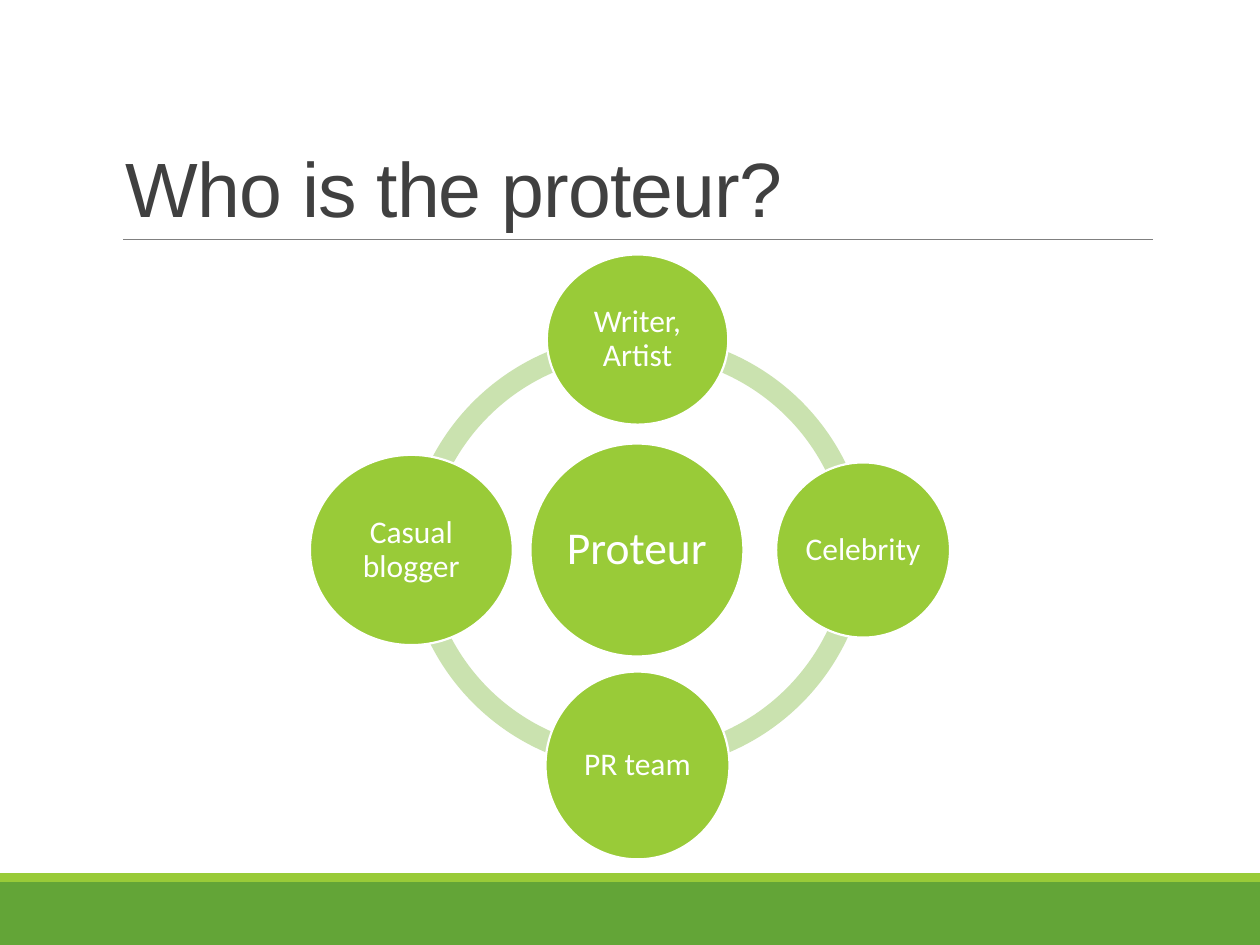
from dataclasses import dataclass

from lxml import etree
from pptx import Presentation
from pptx.dml.color import RGBColor
from pptx.enum.shapes import MSO_CONNECTOR, MSO_SHAPE
from pptx.enum.text import MSO_ANCHOR, PP_ALIGN
from pptx.oxml.ns import qn
from pptx.util import Inches, Pt

RECTANGLE = MSO_SHAPE.RECTANGLE
OVAL = MSO_SHAPE.OVAL
BLOCK_ARC = MSO_SHAPE.BLOCK_ARC
STRAIGHT = MSO_CONNECTOR.STRAIGHT
MIDDLE, BOTTOM = MSO_ANCHOR.MIDDLE, MSO_ANCHOR.BOTTOM
LEFT, CENTER = PP_ALIGN.LEFT, PP_ALIGN.CENTER


@dataclass(frozen=True)
class Theme:
    dark_green: str = "63A537"
    green: str = "99CB38"
    pale_green: str = "CAE2AF"
    white: str = "FFFFFF"
    rule: str = "808080"
    title_color: str = "404040"
    title_font: str = "Arial"
    body_font: str = "Calibri"
    title_size: float = 44
    hub_size: float = 26
    role_size: float = 18


def write_text(frame, text, *, font, size, color, align=LEFT, anchor=MIDDLE,
               line_spacing=0.9, inset=None, tracking=None):
    """Fill a frame with one paragraph; tracking is in points."""
    frame.word_wrap = True
    frame.vertical_anchor = anchor
    if inset is not None:
        frame.margin_left = frame.margin_right = Inches(inset)
        frame.margin_top = frame.margin_bottom = Inches(inset)
    paragraph = frame.paragraphs[0]
    paragraph.text = text
    paragraph.alignment = align
    paragraph.line_spacing = line_spacing
    for run in paragraph.runs:
        run.font.name = font
        run.font.size = Pt(size)
        run.font.color.rgb = RGBColor.from_string(color)
        if tracking is not None:
            run.font._element.set("spc", str(round(tracking * 100)))


class SlideBuilder:
    def __init__(self, slide, theme):
        self.slide = slide
        self.theme = theme

    def shape(self, kind, left, top, width, height, fill, outline=None):
        shape = self.slide.shapes.add_shape(
            kind, Inches(left), Inches(top), Inches(width), Inches(height))
        shape.shadow.inherit = False
        shape.fill.solid()
        shape.fill.fore_color.rgb = RGBColor.from_string(fill)
        if outline:
            shape.line.color.rgb = RGBColor.from_string(outline)
            shape.line.width = Pt(1.25)
        else:
            shape.line.fill.background()
        return shape

    def rule(self, left, right, y):
        line = self.slide.shapes.add_connector(
            STRAIGHT, Inches(left), Inches(y), Inches(right), Inches(y))
        line.line.color.rgb = RGBColor.from_string(self.theme.rule)
        line.line.width = Pt(0.5)
        etree.SubElement(line._element.spPr, qn("a:effectLst"))

    def title(self, text, left, top, width, height):
        box = self.slide.shapes.add_textbox(
            Inches(left), Inches(top), Inches(width), Inches(height))
        write_text(box.text_frame, text, font=self.theme.title_font,
                   size=self.theme.title_size, color=self.theme.title_color,
                   anchor=BOTTOM, line_spacing=0.85, tracking=-0.5)

    def ring_arc(self, left, top, start, end):
        """Draw a ring segment between two angles in degrees, clockwise from east."""
        arc = self.shape(BLOCK_ARC, left, top, 3.67, 3.67, self.theme.pale_green)
        # Adjustments count 100000ths, angles 60000ths of a degree.
        arc.adjustments[0] = start * 0.6
        arc.adjustments[1] = end * 0.6
        arc.adjustments[2] = 0.046

    def circle(self, text, left, top, width, height, size, inset=0.03):
        circle = self.shape(OVAL, left, top, width, height,
                            self.theme.green, outline=self.theme.white)
        write_text(circle.text_frame, text, font=self.theme.body_font, size=size,
                   color=self.theme.white, align=CENTER, inset=inset)


def main():
    presentation = Presentation()
    presentation.slide_width = Inches(10)
    presentation.slide_height = Inches(7.5)
    slide = presentation.slides.add_slide(presentation.slide_layouts[6])
    theme = Theme()
    builder = SlideBuilder(slide, theme)

    builder.shape(RECTANGLE, 0, 7, 10, 0.5, theme.dark_green)
    builder.shape(RECTANGLE, 0, 6.93, 10, 0.07, theme.green)
    builder.rule(0.98, 9.15, 1.9)

    ring_arcs = [
        (3.22, 2.65, 183.77, 270.13),
        (3.22, 2.45, 89.95, 177.51),
        (3.23, 2.45, 2.49, 90.06),
        (3.23, 2.65, 269.88, 356.23),
    ]
    for arc in ring_arcs:
        builder.ring_arc(*arc)

    builder.circle("Proteur", 4.21, 3.52, 1.69, 1.69, theme.hub_size, inset=0.04)
    roles = [
        ("Writer,\nArtist", 4.34, 2.02, 1.44, 1.35),
        ("Celebrity", 6.16, 3.67, 1.38, 1.39),
        ("PR team", 4.33, 5.33, 1.46, 1.49),
        ("Casual blogger", 2.46, 3.61, 1.61, 1.51),
    ]
    for role in roles:
        builder.circle(*role, theme.role_size)

    builder.title("Who is the proteur?", 0.9, 0.31, 8.25, 1.59)
    presentation.save("out.pptx")


if __name__ == "__main__":
    main()
